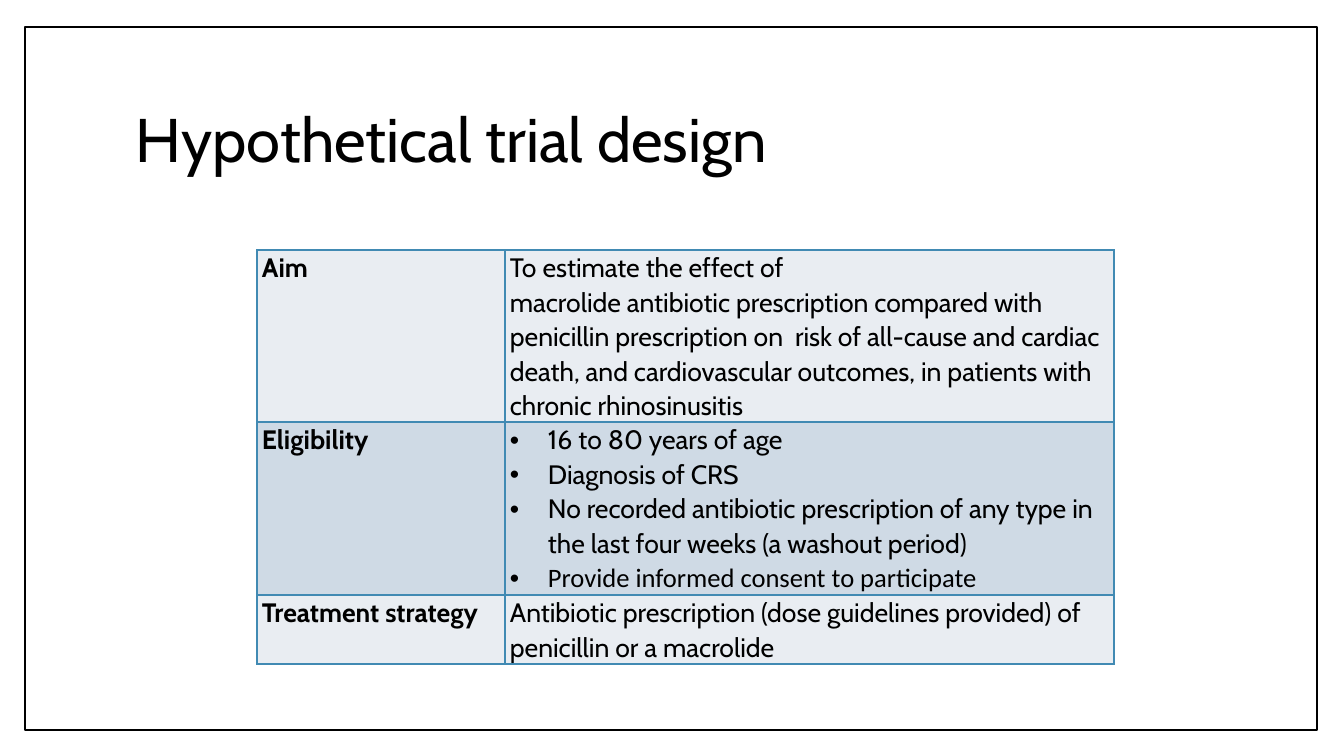
import pptx
import pptx.dml.color
import pptx.enum.shapes
import pptx.enum.text
import pptx.oxml
import pptx.oxml.ns
import pptx.util

TITLE = "Hypothetical trial design"
# label, paragraphs, bulleted
ROWS = [
    ("Aim", [
        "To estimate the effect of",
        "macrolide antibiotic prescription compared with penicillin prescription on  risk of "
        "all-cause and cardiac death, and cardiovascular outcomes, in patients with "
        "chronic rhinosinusitis",
    ], False),
    ("Eligibility", [
        "16 to 80 years of age",
        "Diagnosis of CRS",
        "No recorded antibiotic prescription of any type in the last four weeks "
        "(a washout period)",
        "Provide informed consent to participate",
    ], True),
    ("Treatment strategy", [
        "Antibiotic prescription (dose guidelines provided) of penicillin or a macrolide",
    ], False),
]
CALIBRI_LINES = {"Provide informed consent to participate"}

FRAME_BOX = (25, 27, 1292, 703)
TITLE_BOX = (126, 68, 1089, 149)
TABLE_LEFT, TABLE_TOP = 257, 250
COLUMN_WIDTHS = (248, 609)
ROW_HEIGHTS = (172, 173, 69)
CELL_INSET = 5
BULLET_INDENT = 38

BLACK = pptx.dml.color.RGBColor(0x00, 0x00, 0x00)
WHITE = pptx.dml.color.RGBColor(0xFF, 0xFF, 0xFF)
BORDER = pptx.dml.color.RGBColor(0x41, 0x8A, 0xB3)
BANDS = (pptx.dml.color.RGBColor(0xE9, 0xED, 0xF2),
         pptx.dml.color.RGBColor(0xCF, 0xDA, 0xE5))


def px(length):
    """Turn pixels (100.8 to the inch) into EMU."""
    return pptx.util.Emu(round(length * 914400 / 100.8))


def format_paragraph(para, size, spacing, bold=False):
    para.line_spacing = spacing
    for span in para.runs:
        span.font.name = "Calibri" if span.text in CALIBRI_LINES else "Cabin"
        span.font.size = pptx.util.Pt(size)
        span.font.bold = bold
        span.font.color.rgb = BLACK


def add_bullet(para):
    properties = para._p.get_or_add_pPr()
    properties.set("marL", str(px(BULLET_INDENT)))
    properties.set("indent", str(-px(BULLET_INDENT)))
    namespace = pptx.oxml.ns.nsdecls("a")
    properties.append(pptx.oxml.parse_xml(f'<a:buFont {namespace} typeface="Arial"/>'))
    properties.append(pptx.oxml.parse_xml(f'<a:buChar {namespace} char="•"/>'))


def add_borders(cell):
    properties = cell._tc.get_or_add_tcPr()
    for index, side in enumerate(("lnL", "lnR", "lnT", "lnB")):
        properties.insert(index, pptx.oxml.parse_xml(
            f'<a:{side} {pptx.oxml.ns.nsdecls("a")} w="{pptx.util.Pt(1)}">'
            f'<a:solidFill><a:srgbClr val="{BORDER}"/></a:solidFill></a:{side}>'))


def fill_cell(cell, lines, band, bold=False, bulleted=False):
    cell.margin_left = cell.margin_right = px(CELL_INSET)
    cell.margin_top = cell.margin_bottom = 0
    cell.fill.solid()
    cell.fill.fore_color.rgb = band
    add_borders(cell)
    cell.text_frame.text = "\n".join(lines)
    for para in cell.text_frame.paragraphs:
        format_paragraph(para, 19, 1.07, bold)
        if bulleted:
            add_bullet(para)


def add_frame(page):
    frame = page.shapes.add_shape(pptx.enum.shapes.MSO_SHAPE.RECTANGLE, *map(px, FRAME_BOX))
    frame.shadow.inherit = False
    frame.fill.solid()
    frame.fill.fore_color.rgb = WHITE
    frame.line.color.rgb = BLACK
    frame.line.width = pptx.util.Pt(1)


def add_title(page):
    box = page.shapes.add_textbox(*map(px, TITLE_BOX))
    box.text_frame.word_wrap = True
    box.text_frame.vertical_anchor = pptx.enum.text.MSO_ANCHOR.MIDDLE
    box.text_frame.text = TITLE
    format_paragraph(box.text_frame.paragraphs[0], 44, 0.9)


def add_design_table(page):
    table = page.shapes.add_table(
        len(ROWS), len(COLUMN_WIDTHS), px(TABLE_LEFT), px(TABLE_TOP),
        px(sum(COLUMN_WIDTHS)), px(sum(ROW_HEIGHTS))).table
    table.first_row = table.horz_banding = False
    for column, width in zip(table.columns, COLUMN_WIDTHS):
        column.width = px(width)
    for index, (label, lines, bulleted) in enumerate(ROWS):
        table.rows[index].height = px(ROW_HEIGHTS[index])
        band = BANDS[index % len(BANDS)]
        fill_cell(table.cell(index, 0), [label], band, bold=True)
        fill_cell(table.cell(index, 1), lines, band, bulleted=bulleted)


def main():
    deck = pptx.Presentation()
    deck.slide_width, deck.slide_height = px(1344), px(756)
    page = deck.slides.add_slide(deck.slide_layouts[6])
    add_frame(page)
    add_title(page)
    add_design_table(page)
    deck.save("out.pptx")


if __name__ == "__main__":
    main()
